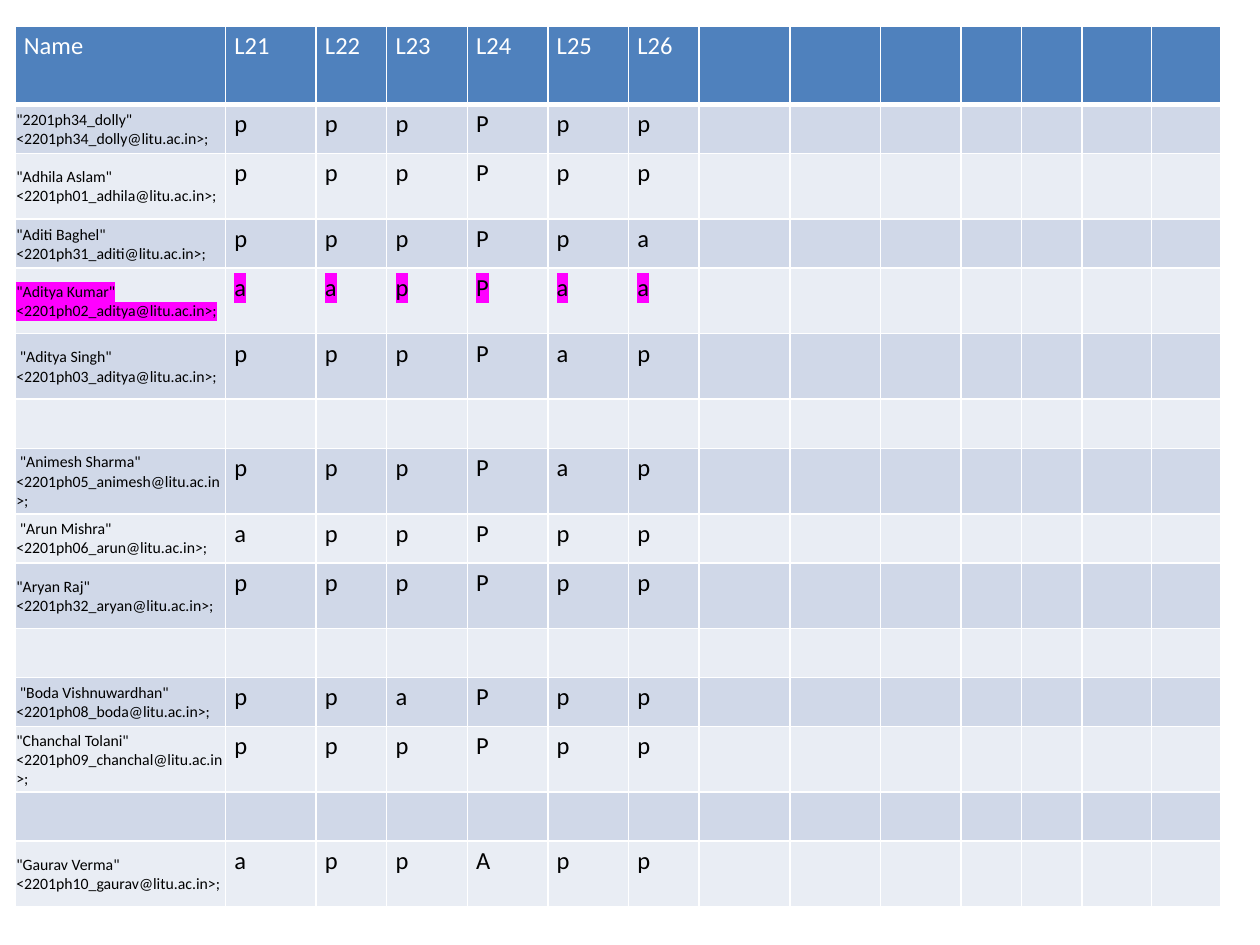
import pptx
import pptx.dml.color
import pptx.enum.text
import pptx.oxml.ns
import pptx.util
from lxml import etree

Inches = pptx.util.Inches
Pt = pptx.util.Pt

COLORS = {
    "header": "4F81BD",
    "band_dark": "D0D8E8",
    "band_light": "E9EDF4",
    "white": "FFFFFF",
    "black": "000000",
    "highlight": "FF00FF",
}
FONT = "Calibri"
DOMAIN = "litu.ac.in"
COLUMN_WIDTHS = [1.67, 0.72, 0.56, 0.64, 0.64, 0.64, 0.56,
                 0.72, 0.72, 0.64, 0.48, 0.48, 0.55, 0.55]
HEADER_HEIGHT, SHORT, TALL = 0.62, 0.39, 0.52
HEADINGS = ["Name", "L21", "L22", "L23", "L24", "L25", "L26"]
STUDENTS = [
    ('"2201ph34_dolly"', "2201ph34_dolly", "pppPpp", SHORT),
    ('"Adhila Aslam"', "2201ph01_adhila", "pppPpp", TALL),
    ('"Aditi Baghel"', "2201ph31_aditi", "pppPpa", SHORT),
    ('"Aditya Kumar"', "2201ph02_aditya", "aapPaa", TALL),
    (' "Aditya Singh"', "2201ph03_aditya", "pppPap", TALL),
    ("", "", "", SHORT),
    (' "Animesh Sharma"', "2201ph05_animesh", "pppPap", TALL),
    (' "Arun Mishra"', "2201ph06_arun", "appPpp", SHORT),
    ('"Aryan Raj"', "2201ph32_aryan", "pppPpp", TALL),
    ("", "", "", SHORT),
    (' "Boda Vishnuwardhan"', "2201ph08_boda", "ppaPpp", SHORT),
    ('"Chanchal Tolani"', "2201ph09_chanchal", "pppPpp", TALL),
    ("", "", "", SHORT),
    ('"Gaurav Verma"', "2201ph10_gaurav", "appApp", TALL),
]
HIGHLIGHTED_USER = "2201ph02_aditya"


class SlideBuilder:
    def __init__(self, slide):
        self.slide = slide

    def color(self, name):
        return pptx.dml.color.RGBColor.from_string(COLORS[name])

    def table(self, left, top, widths, heights):
        shape = self.slide.shapes.add_table(
            len(heights), len(widths), Inches(left), Inches(top),
            Inches(sum(widths)), Inches(sum(heights)))
        for column, width in zip(shape.table.columns, widths):
            column.width = Inches(width)
        for row, height in zip(shape.table.rows, heights):
            row.height = Inches(height)
        return shape.table

    def borders(self, cell, bottom):
        properties = cell._tc.get_or_add_tcPr()
        for side, points in (("L", 1), ("R", 1), ("T", 1), ("B", bottom)):
            line = etree.SubElement(properties, pptx.oxml.ns.qn(f"a:ln{side}"), w=str(Pt(points)))
            fill = etree.SubElement(line, pptx.oxml.ns.qn("a:solidFill"))
            etree.SubElement(fill, pptx.oxml.ns.qn("a:srgbClr"), val=COLORS["white"])

    def highlight(self, run):
        mark = etree.SubElement(run._r.get_or_add_rPr(), pptx.oxml.ns.qn("a:highlight"))
        etree.SubElement(mark, pptx.oxml.ns.qn("a:srgbClr"), val=COLORS["highlight"])

    def cell(self, cell, text, fill, font_color="black", size=14, bottom=1,
             compact=False, highlighted=False):
        self.borders(cell, bottom)
        cell.fill.solid()
        cell.fill.fore_color.rgb = self.color(fill)
        side, above, below = (0.01, 0.01, 0) if compact else (0.07, 0.04, 0.04)
        cell.margin_left = cell.margin_right = Inches(side)
        cell.margin_top, cell.margin_bottom = Inches(above), Inches(below)
        if compact:
            cell.vertical_anchor = pptx.enum.text.MSO_ANCHOR.MIDDLE
        paragraph = cell.text_frame.paragraphs[0]
        paragraph.font.name = FONT
        paragraph.font.size = Pt(size)
        paragraph.font.color.rgb = self.color(font_color)
        if text:
            run = paragraph.add_run()
            run.text = text
            if highlighted:
                self.highlight(run)


def main():
    presentation = pptx.Presentation()
    presentation.slide_width = Inches(10)
    presentation.slide_height = Inches(7.5)
    builder = SlideBuilder(presentation.slides.add_slide(presentation.slide_layouts[6]))

    heights = [HEADER_HEIGHT] + [student[3] for student in STUDENTS]
    table = builder.table(0.12, 0.21, COLUMN_WIDTHS, heights)
    column_count = len(COLUMN_WIDTHS)

    for column in range(column_count):
        heading = HEADINGS[column] if column < len(HEADINGS) else ""
        builder.cell(table.cell(0, column), heading, "header", "white", bottom=3)

    for row, (name, user, marks, _) in enumerate(STUDENTS, start=1):
        band = "band_dark" if row % 2 else "band_light"
        highlighted = user == HIGHLIGHTED_USER
        contact = f"{name} <{user}@{DOMAIN}>;" if name else ""
        builder.cell(table.cell(row, 0), contact, band, size=9,
                     compact=bool(name), highlighted=highlighted)
        for column in range(1, column_count):
            mark = marks[column - 1:column]
            builder.cell(table.cell(row, column), mark, band, highlighted=highlighted)

    presentation.save("out.pptx")


if __name__ == "__main__":
    main()
